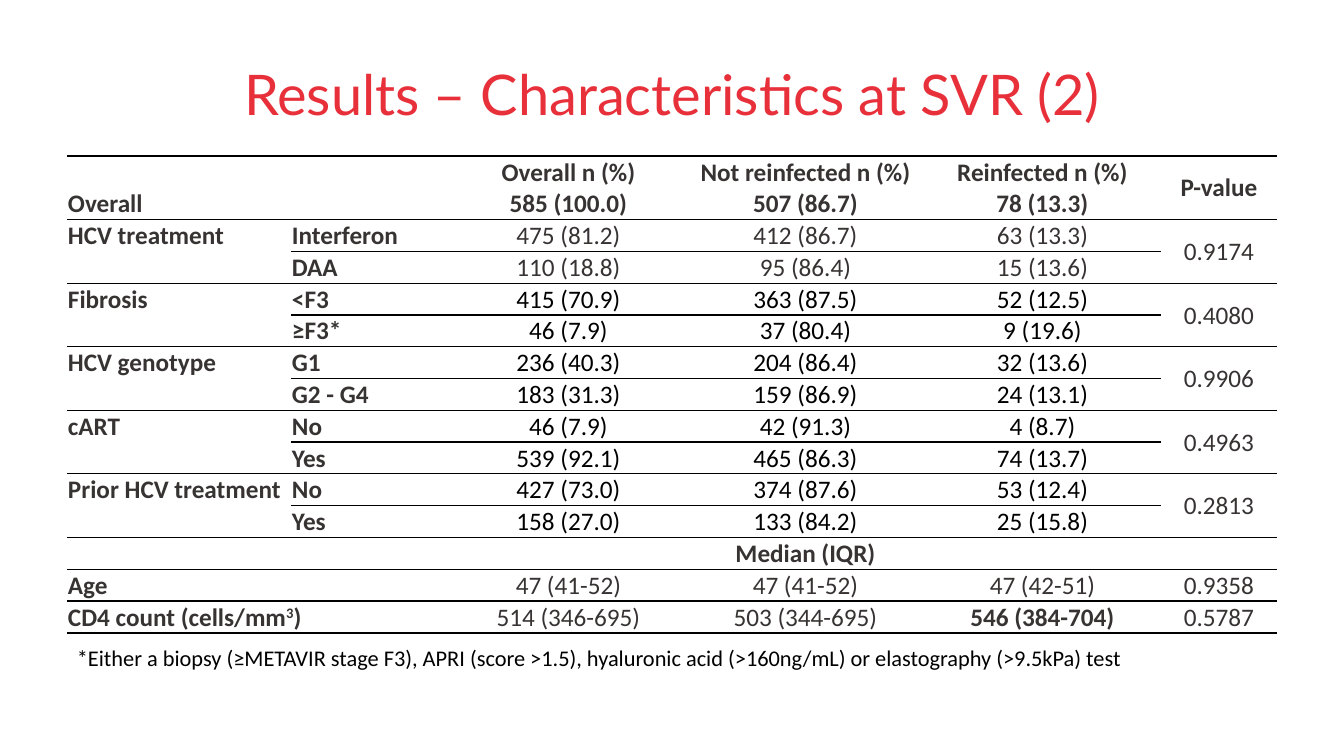
import pptx
import pptx.dml.color
import pptx.enum.text
import pptx.oxml
import pptx.oxml.ns
import pptx.util

TITLE = "Results – Characteristics at SVR (2)"
FOOTNOTE = ("*Either a biopsy (≥METAVIR stage F3), APRI (score >1.5), hyaluronic acid "
            "(>160ng/mL) or elastography (>9.5kPa) test")
HEADER = [
    ("", "", "Overall n (%)", "Not reinfected n (%)", "Reinfected n (%)", "P-value"),
    ("Overall", "", "585 (100.0)", "507 (86.7)", "78 (13.3)", ""),
]
GROUPS = [
    ("HCV treatment", "0.9174", [
        ("Interferon", "475 (81.2)", "412 (86.7)", "63 (13.3)"),
        ("DAA", "110 (18.8)", "95 (86.4)", "15 (13.6)")]),
    ("Fibrosis", "0.4080", [
        ("<F3", "415 (70.9)", "363 (87.5)", "52 (12.5)"),
        ("≥F3*", "46 (7.9)", "37 (80.4)", "9 (19.6)")]),
    ("HCV genotype", "0.9906", [
        ("G1", "236 (40.3)", "204 (86.4)", "32 (13.6)"),
        ("G2 - G4", "183 (31.3)", "159 (86.9)", "24 (13.1)")]),
    ("cART", "0.4963", [
        ("No", "46 (7.9)", "42 (91.3)", "4 (8.7)"),
        ("Yes", "539 (92.1)", "465 (86.3)", "74 (13.7)")]),
    ("Prior HCV treatment", "0.2813", [
        ("No", "427 (73.0)", "374 (87.6)", "53 (12.4)"),
        ("Yes", "158 (27.0)", "133 (84.2)", "25 (15.8)")]),
]
MEDIANS = [
    ("", "", "Median (IQR)", "", "", ""),
    ("Age", "", "47 (41-52)", "47 (41-52)", "47 (42-51)", "0.9358"),
    ("CD4 count (cells/mm^3^)", "", "514 (346-695)", "503 (344-695)", "546 (384-704)", "0.5787"),
]
BOLD_RESULT = "546 (384-704)"
COLORS = {"title": "E8303B", "text": "383333", "black": "000000", "white": "FFFFFF"}
COLUMNS = [224, 159, 237, 237, 237, 116]
ROW_HEIGHT = 31
LEFT, WIDTH = 67, 1210
PX = 914400 / 100.8
NO_GRID_STYLE = "{2D5ABB26-0587-4C30-8999-92F81FD0307C}"
ALIGN = pptx.enum.text.PP_ALIGN
ANCHOR = pptx.enum.text.MSO_ANCHOR


def px(*lengths):
    return [round(length * PX) for length in lengths]


def rgb(name):
    return pptx.dml.color.RGBColor.from_string(COLORS[name])


def style(span, font, size, color, bold=False):
    span.font.name = font
    span.font.size = pptx.util.Pt(size)
    span.font.color.rgb = rgb(color)
    span.font.bold = bold


def add_rule(cell, side, points):
    if points:
        cell._tc.get_or_add_tcPr().append(pptx.oxml.parse_xml(
            f'<a:{side} {pptx.oxml.ns.nsdecls("a")} w="{points * 12700}"><a:solidFill>'
            f'<a:srgbClr val="{COLORS["black"]}"/></a:solidFill></a:{side}>'))


def write_cell(cell, text, color, bold, align, anchor):
    cell.margin_left = cell.margin_right = cell.margin_top = pptx.util.Inches(0.01)
    cell.margin_bottom = 0
    cell.vertical_anchor = anchor
    cell.fill.solid()
    cell.fill.fore_color.rgb = rgb("white")
    para = cell.text_frame.paragraphs[0]
    para.alignment = align
    for index, part in enumerate(text.split("^")):
        if part:
            span = para.add_run()
            span.text = part
            style(span, "Calibri", 18, color, bold)
            if index % 2:
                span._r.get_or_add_rPr().set("baseline", "30000")


def add_results(page):
    rows = list(HEADER)
    merges = [(0, 0, 1, 2), (0, 5, 2, 1), (1, 0, 1, 2)]
    black_rows = set()
    for label, p_value, levels in GROUPS:
        first = len(rows)
        merges += [(first, column, len(levels), 1) for column in (0, 5)]
        for index, level in enumerate(levels):
            rows.append((label if index == 0 else "", *level, p_value if index == 0 else ""))
            if label != "HCV treatment":
                black_rows.add(first + index)
    median = len(rows)
    rows += MEDIANS
    merges += [(median + index, 0, 1, 2) for index in range(len(MEDIANS))]
    merges.append((median, 2, 1, 3))
    rules = [2, 0] + [1] * (len(rows) - 2) + [2]

    frame = page.shapes.add_table(len(rows), len(COLUMNS),
                                  *px(LEFT, 156, WIDTH, ROW_HEIGHT * len(rows)))
    table = frame.table
    table.first_row = table.horz_banding = False
    table._tbl.tblPr.find(pptx.oxml.ns.qn("a:tableStyleId")).text = NO_GRID_STYLE
    for column, width in zip(table.columns, px(*COLUMNS)):
        column.width = width
    for row in table.rows:
        row.height = px(ROW_HEIGHT)[0]
    for top, left, height, width in merges:
        table.cell(top, left).merge(table.cell(top + height - 1, left + width - 1))

    for r, texts in enumerate(rows):
        for c, text in enumerate(texts):
            cell = table.cell(r, c)
            if not (cell.is_spanned and c in (0, 5)):
                height = cell.span_height if cell.is_merge_origin else 1
                add_rule(cell, "lnT", rules[r])
                add_rule(cell, "lnB", rules[r + height])
            bold = c < 2 or r < len(HEADER) or r == median or text == BOLD_RESULT
            color = "black" if r in black_rows and 2 <= c <= 4 else "text"
            anchor = ANCHOR.TOP if c == 0 else ANCHOR.MIDDLE if c == 5 else ANCHOR.BOTTOM
            write_cell(cell, text, color, bold, ALIGN.LEFT if c < 2 else ALIGN.CENTER, anchor)


def main():
    deck = pptx.Presentation()
    deck.slide_width, deck.slide_height = px(1344, 756)
    page = deck.slides.add_slide(deck.slide_layouts[5])

    title = page.shapes.title
    title.left, title.top, title.width, title.height = px(LEFT, 30, WIDTH, 126)
    title.text_frame.text = TITLE
    title.text_frame.vertical_anchor = ANCHOR.MIDDLE
    title.text_frame.paragraphs[0].alignment = ALIGN.CENTER
    style(title.text_frame.paragraphs[0].runs[0], "Lato", 40, "title")

    add_results(page)

    box = page.shapes.add_textbox(*px(LEFT, 639, WIDTH, 37))
    box.text_frame.word_wrap = True
    box.text_frame.text = FOOTNOTE
    style(box.text_frame.paragraphs[0].runs[0], "Calibri", 16, "black")
    deck.save("out.pptx")


if __name__ == "__main__":
    main()
